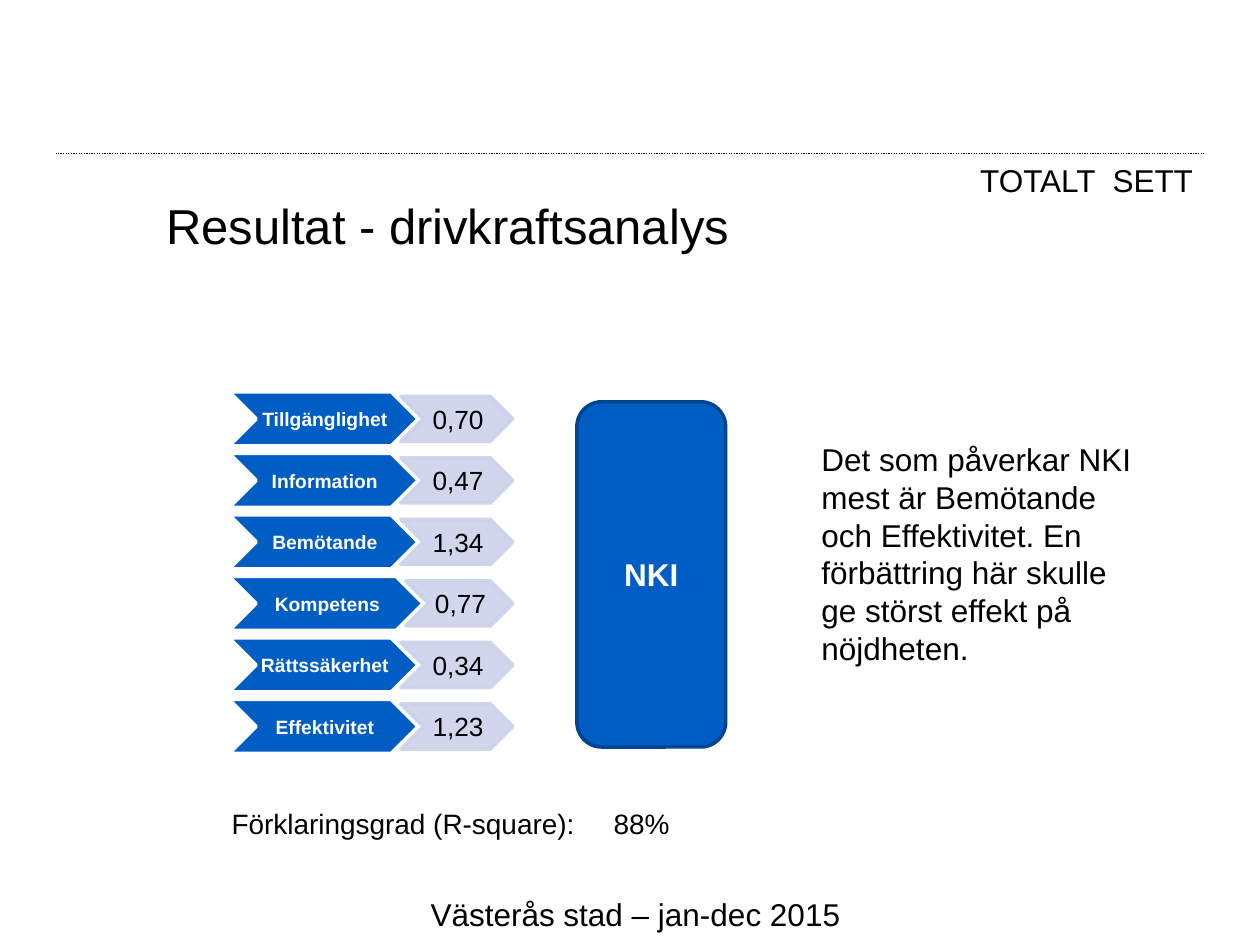
"""Build the driver analysis slide: six factors with their weights leading to NKI."""
from lxml.etree import SubElement
from pptx import Presentation
from pptx.dml.color import RGBColor
from pptx.enum.dml import MSO_LINE
from pptx.enum.shapes import MSO_CONNECTOR, MSO_SHAPE
from pptx.enum.text import MSO_ANCHOR, PP_ALIGN
from pptx.oxml.ns import qn
from pptx.util import Cm, Pt

TITLE = "Resultat - drivkraftsanalys"
SCOPE = "TOTALT  SETT"
FOOTER = "Västerås stad – jan-dec 2015"
TARGET = "NKI"
EXPLAINED = "Förklaringsgrad (R-square):\t88%"
CONCLUSION = (
    "Det som påverkar NKI mest är Bemötande och Effektivitet. "
    "En förbättring här skulle ge störst effekt på nöjdheten."
)
FACTORS = [
    ("Tillgänglighet", "0,70", 3.81),
    ("Information", "0,47", 3.81),
    ("Bemötande", "1,34", 3.81),
    ("Kompetens", "0,77", 3.91),
    ("Rättssäkerhet", "0,34", 3.81),
    ("Effektivitet", "1,23", 3.81),
]
THEME = {
    "font": "Arial",
    "black": "000000",
    "white": "FFFFFF",
    "blue": "005DC4",
    "dark_blue": "004591",
    "pale": "CCD2EA",
    "title": 28,
    "body": 18,
    "note": 16,
    "value": 15,
    "label": 11,
}
LEFT, TOP, PITCH = 4.62, 7.9, 1.24
LABEL_HEIGHT, VALUE_HEIGHT = 1.09, 0.91
OVERLAP, VALUE_RIGHT = 0.35, 10.34
DEFAULT_INSETS = (0.25, 0.13, 0.25, 0.13)
CHEVRON_INSETS = (0.05, 0.03, 0, 0.03)


def write(shape, text, size="body", color="black", bold=False, align=PP_ALIGN.LEFT,
          anchor=MSO_ANCHOR.TOP, wrap=True, insets=DEFAULT_INSETS, tab=None):
    frame = shape.text_frame
    frame.word_wrap = wrap
    frame.vertical_anchor = anchor
    frame.margin_left, frame.margin_top, frame.margin_right, frame.margin_bottom = map(Cm, insets)
    paragraph = frame.paragraphs[0]
    paragraph.alignment = align
    if tab:
        properties = paragraph._p.get_or_add_pPr()
        tabs = SubElement(properties, qn("a:tabLst"))
        SubElement(tabs, qn("a:tab"), pos=str(Cm(tab)), algn="l")
    run = paragraph.add_run()
    run.text = text
    run.font.name = THEME["font"]
    run.font.size = Pt(THEME[size])
    run.font.bold = bold
    run.font.color.rgb = RGBColor.from_string(THEME[color])


def add_text(slide, box, text, **style):
    write(slide.shapes.add_textbox(*map(Cm, box)), text, **style)


def add_block(slide, kind, box, text, fill, line, opacity=None, **style):
    shape = slide.shapes.add_shape(kind, *map(Cm, box))
    shape.shadow.inherit = False
    shape.fill.solid()
    shape.fill.fore_color.rgb = RGBColor.from_string(THEME[fill])
    shape.line.color.rgb = RGBColor.from_string(THEME[line])
    shape.line.width = Pt(2)
    if opacity:
        for color in shape._element.spPr.iter(qn("a:srgbClr")):
            SubElement(color, qn("a:alpha"), val=str(opacity * 1000))
    write(shape, text, align=PP_ALIGN.CENTER, anchor=MSO_ANCHOR.MIDDLE, **style)


def add_rule(slide):
    rule = slide.shapes.add_connector(
        MSO_CONNECTOR.STRAIGHT, Cm(24.28), Cm(3.1), Cm(1.12), Cm(3.1))
    rule.line.color.rgb = RGBColor.from_string(THEME["black"])
    rule.line.width = Pt(0.75)
    rule.line.dash_style = MSO_LINE.ROUND_DOT
    SubElement(rule._element.spPr, qn("a:effectLst"))


def add_factors(slide):
    for row, (label, value, width) in enumerate(FACTORS):
        top = TOP + row * PITCH
        add_block(slide, MSO_SHAPE.CHEVRON, (LEFT, top, width, LABEL_HEIGHT), label,
                  "blue", "white", size="label", color="white", bold=True,
                  wrap=False, insets=CHEVRON_INSETS)
        value_left = LEFT + width - OVERLAP
        value_top = top + (LABEL_HEIGHT - VALUE_HEIGHT) / 2
        add_block(slide, MSO_SHAPE.CHEVRON,
                  (value_left, value_top, VALUE_RIGHT - value_left, VALUE_HEIGHT), value,
                  "pale", "pale", opacity=90, size="value",
                  wrap=False, insets=CHEVRON_INSETS)


def main():
    presentation = Presentation()
    presentation.slide_width, presentation.slide_height = Cm(25.4), Cm(19.05)
    slide = presentation.slides.add_slide(presentation.slide_layouts[6])
    add_rule(slide)
    add_text(slide, (8.43, 17.91, 8.84, 1.02), FOOTER, wrap=False)
    add_text(slide, (3.1, 3.94, 19.2, 1.19), TITLE, size="title", anchor=MSO_ANCHOR.MIDDLE)
    add_block(slide, MSO_SHAPE.ROUNDED_RECTANGLE, (11.63, 8.1, 3, 6.96), TARGET,
              "blue", "dark_blue", color="white", bold=True)
    add_text(slide, (19.51, 3.12, 4.85, 1.02), SCOPE, wrap=False)
    add_factors(slide)
    add_text(slide, (4.42, 16.13, 10.59, 0.92), EXPLAINED, size="note", tab=7.7)
    add_text(slide, (16.31, 8.74, 7.01, 4.88), CONCLUSION)
    presentation.save("out.pptx")


if __name__ == "__main__":
    main()
